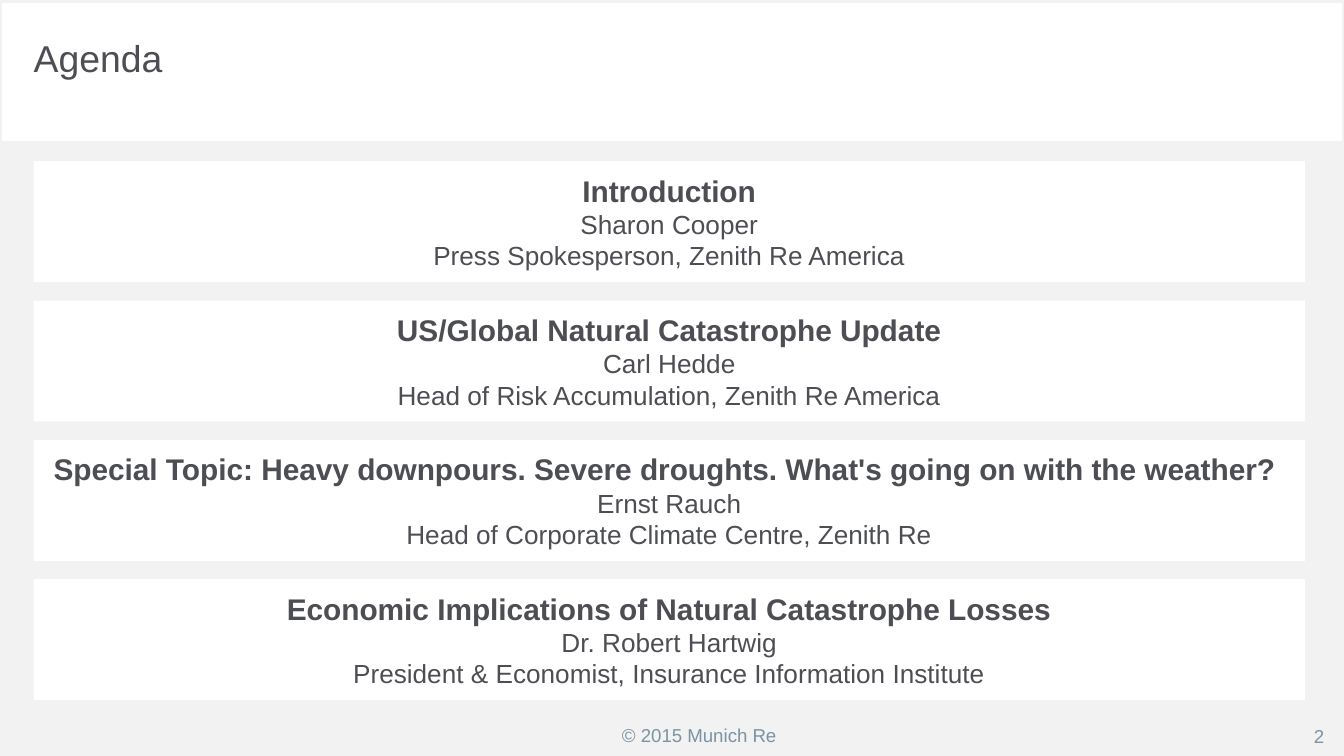
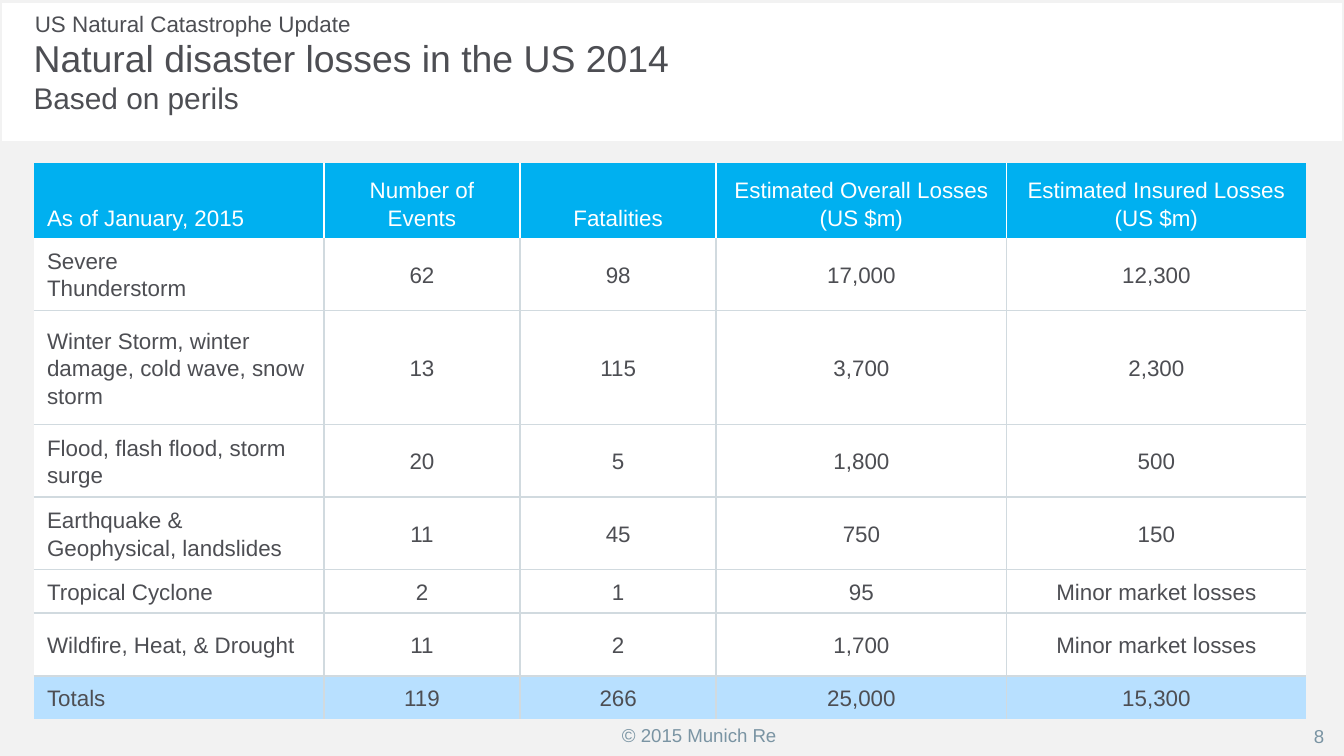
import itertools

import pptx
import pptx.dml.color
import pptx.enum.shapes
import pptx.enum.text
import pptx.oxml.ns
import pptx.util
from lxml import etree

Inches = pptx.util.Inches
Pt = pptx.util.Pt
ALIGN = pptx.enum.text.PP_ALIGN
ANCHOR = pptx.enum.text.MSO_ANCHOR
qn = pptx.oxml.ns.qn

FONT = "Arial"
TEXT, MUTED, WHITE = "4D4E53", "7A94A3", "FFFFFF"
BACKDROP, RULE = "F2F2F2", "D1DADF"
HEADER, TOTALS = "00B0F0", "B8E0FF"

# \v is a line break inside a paragraph, \n starts a new paragraph.
AGENDA = [
    "Introduction\vSharon Cooper\nPress Spokesperson, Zenith Re America",
    "US/Global Natural Catastrophe Update\vCarl Hedde\n"
    "Head of Risk Accumulation, Zenith Re America",
    "Special Topic: Heavy downpours. Severe droughts. What's going on with the weather? \v"
    "Ernst Rauch\nHead of Corporate Climate Centre, Zenith Re",
    "Economic Implications of Natural Catastrophe Losses\vDr. Robert Hartwig\n"
    "President & Economist, Insurance Information Institute",
]

LOSSES = [
    ("As of January, 2015", "Number of Events", "Fatalities",
     "Estimated Overall Losses (US $m)", "Estimated Insured Losses (US $m)"),
    ("Severe\vThunderstorm", "62", "98", "17,000", "12,300"),
    ("Winter Storm, winter damage, cold wave, snow storm", "13", "115", "3,700", "2,300"),
    ("Flood, flash flood, storm surge", "20", "5", "1,800", "500"),
    ("Earthquake & Geophysical, landslides", "11", "45", "750", "150"),
    ("Tropical Cyclone", "2", "1", "95", "Minor market losses"),
    ("Wildfire, Heat, & Drought", "11", "2", "1,700", "Minor market losses"),
    ("Totals", "119", "266", "25,000", "15,300"),
]
COLUMN_WIDTHS = [2.16, 1.46, 1.46, 2.16, 2.23]
ROW_HEIGHTS = [0.56, 0.54, 0.85, 0.54, 0.54, 0.32, 0.47, 0.32]


def rgb(value):
    return pptx.dml.color.RGBColor.from_string(value)


def write(frame, text, sizes, color=TEXT, align=ALIGN.LEFT, spacing=None, bold_first=False):
    """Fill a text frame; sizes go to the lines in turn, the last one repeating."""
    frame.text = text
    line_sizes = itertools.chain(sizes, itertools.repeat(sizes[-1]))
    bold = bold_first
    for paragraph in frame.paragraphs:
        paragraph.alignment = align
        paragraph.line_spacing = spacing
        for line_break in paragraph._p.findall(qn("a:br")):
            etree.SubElement(line_break, qn("a:rPr"), sz=str(sizes[-1] * 100))
        for run in paragraph.runs:
            run.font.name = FONT
            run.font.size = Pt(next(line_sizes))
            run.font.bold = bold
            run.font.color.rgb = rgb(color)
            bold = False


def add_text(slide, box, text, sizes, wrap=True, insets=(0.1, 0.05), anchor=ANCHOR.TOP, **style):
    frame = slide.shapes.add_textbox(*map(Inches, box)).text_frame
    frame.word_wrap = wrap
    frame.vertical_anchor = anchor
    frame.margin_left = frame.margin_right = Inches(insets[0])
    frame.margin_top = frame.margin_bottom = Inches(insets[1])
    write(frame, text, sizes, **style)


def add_panel(slide, box, fill=None, line=None):
    panel = slide.shapes.add_shape(pptx.enum.shapes.MSO_SHAPE.RECTANGLE, *map(Inches, box))
    panel.shadow.inherit = False
    if fill:
        panel.fill.solid()
        panel.fill.fore_color.rgb = rgb(fill)
    else:
        panel.fill.background()
    if line:
        panel.line.color.rgb = rgb(line)
        panel.line.width = Pt(2)
    else:
        panel.line.fill.background()
    return panel


def add_base(deck, number, title, kicker=None):
    """Add a slide with the shared backdrop, title, footer and page number."""
    slide = deck.slides.add_slide(deck.slide_layouts[6])
    add_panel(slide, (0, 1.05, 10, 4.58), fill=BACKDROP)
    add_panel(slide, (0, 0.01, 10, 5.62), line=BACKDROP)
    add_text(slide, (4.53, 5.34, 1.36, 0.27), "© 2015 Munich Re", [10], wrap=False, color=MUTED)
    add_text(slide, (9.2, 5.34, 0.75, 0.27), str(number), [10], anchor=ANCHOR.MIDDLE,
             color=MUTED, align=ALIGN.RIGHT)
    if kicker:
        add_text(slide, (0.26, 0.03, 2.37, 0.3), kicker, [12], wrap=False, insets=(0, 0.05))
    add_text(slide, (0.25, 0.26, 7.48, 0.59), title, [20, 16], insets=(0, 0))
    return slide


def add_agenda(slide, box, topics, height=0.9):
    left, top, width, total = box
    pitch = (total - height) / (len(topics) - 1)
    for index, topic in enumerate(topics):
        panel = add_panel(slide, (left, top + index * pitch, width, height), fill=WHITE)
        panel.text_frame.word_wrap = True
        panel.text_frame.vertical_anchor = ANCHOR.MIDDLE
        write(panel.text_frame, topic, [16, 14], align=ALIGN.CENTER, bold_first=True)


def set_borders(cell, colors):
    """Set left, right, top and bottom borders; None means no line."""
    properties = cell._tc.get_or_add_tcPr()
    for side, color in zip("LRTB", colors):
        line = etree.SubElement(properties, qn(f"a:ln{side}"), w=str(Pt(1)))
        if color:
            fill = etree.SubElement(line, qn("a:solidFill"))
            etree.SubElement(fill, qn("a:srgbClr"), val=color)
        else:
            etree.SubElement(line, qn("a:noFill"))


def add_losses(slide, left, top):
    last_row, last_column = len(LOSSES) - 1, len(COLUMN_WIDTHS) - 1
    table = slide.shapes.add_table(
        len(LOSSES), len(COLUMN_WIDTHS), Inches(left), Inches(top),
        Inches(sum(COLUMN_WIDTHS)), Inches(sum(ROW_HEIGHTS))).table
    table.first_row = table.horz_banding = False
    for column, width in zip(table.columns, COLUMN_WIDTHS):
        column.width = Inches(width)
    for r, (row, height) in enumerate(zip(table.rows, ROW_HEIGHTS)):
        row.height = Inches(height)
        is_header = r == 0
        fill = HEADER if is_header else TOTALS if r == last_row else WHITE
        upright = WHITE if is_header else RULE
        for c, cell in enumerate(row.cells):
            set_borders(cell, (upright if c > 0 else None,
                               upright if c < last_column else None,
                               RULE if r > 1 else None,
                               RULE if 0 < r < last_row else None))
            cell.fill.solid()
            cell.fill.fore_color.rgb = rgb(fill)
            cell.vertical_anchor = ANCHOR.BOTTOM if is_header else ANCHOR.MIDDLE
            write(cell.text_frame, LOSSES[r][c], [12],
                  color=WHITE if is_header else TEXT,
                  align=ALIGN.CENTER if c else ALIGN.LEFT, spacing=1.1)


def main():
    deck = pptx.Presentation()
    deck.slide_width = Inches(10)
    deck.slide_height = Inches(10 * 9 / 16)
    agenda = add_base(deck, 2, "Agenda")
    add_agenda(agenda, (0.25, 1.2, 9.46, 4.01), AGENDA)
    losses = add_base(deck, 8, "Natural disaster losses in the US 2014\vBased on perils",
                      kicker="US Natural Catastrophe Update")
    add_losses(losses, 0.25, 1.21)
    deck.save("out.pptx")


if __name__ == "__main__":
    main()
